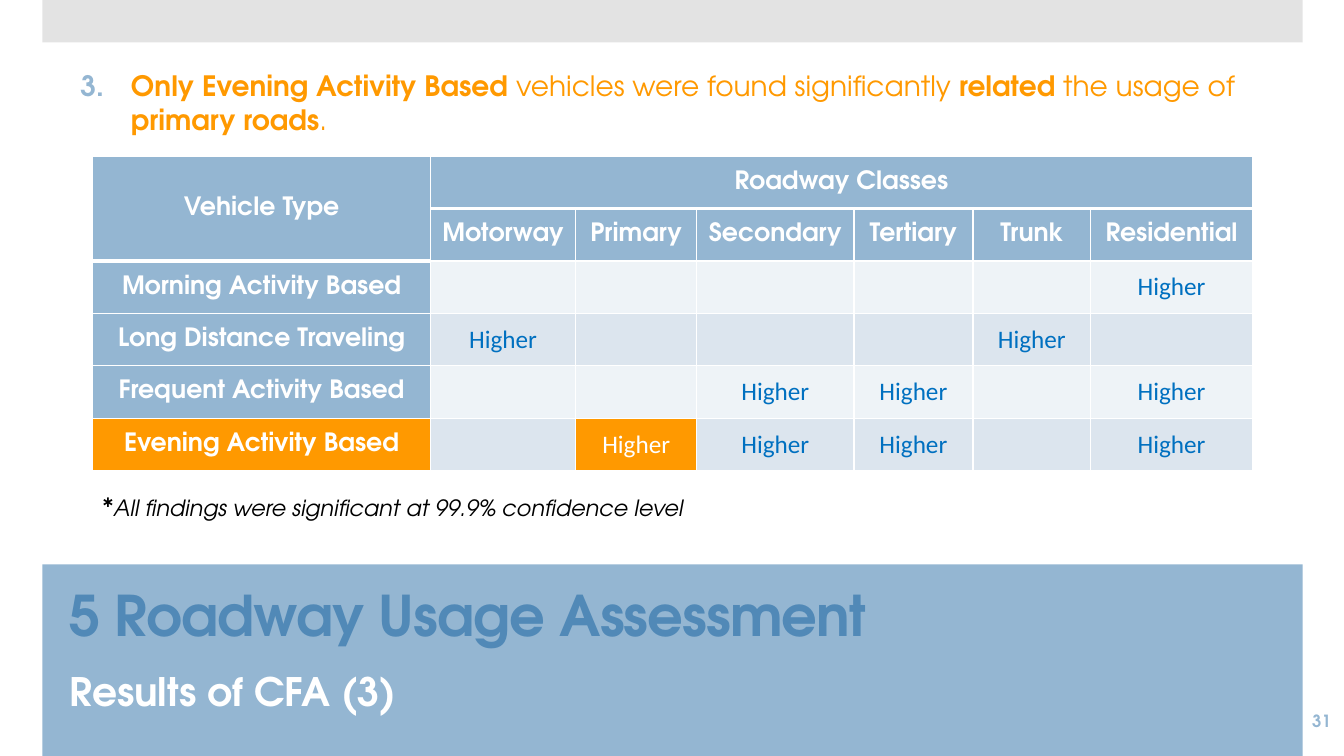
import pptx
import pptx.util
import pptx.dml.color
import pptx.enum.shapes
import pptx.enum.text
import pptx.oxml.ns
from lxml import etree

Inches, Pt = pptx.util.Inches, pptx.util.Pt
ALIGN, ANCHOR = pptx.enum.text.PP_ALIGN, pptx.enum.text.MSO_ANCHOR
qn = pptx.oxml.ns.qn

COLORS = {
    "blue": "94B6D2", "title": "5189B7", "grey": "C8C8C8", "orange": "FF9900",
    "white": "FFFFFF", "black": "000000", "value": "0070C0",
    "band_light": "EEF3F7", "band_dark": "DCE5EE",
}
HEAD_FONT, VALUE_FONT = "TeX Gyre Adventor", "Calibri"

ROADS = ["Motorway", "Primary", "Secondary", "Tertiary", "Trunk", "Residential"]
HIGHER = {
    "Morning Activity Based": ["Residential"],
    "Long Distance Traveling": ["Motorway", "Trunk"],
    "Frequent Activity Based": ["Secondary", "Tertiary", "Residential"],
    "Evening Activity Based": ["Primary", "Secondary", "Tertiary", "Residential"],
}
HIGHLIGHTS = [(5, 0), (5, 2)]
COL_WIDTHS = [3.35, 1.44, 1.2, 1.56, 1.18, 1.17, 1.6]
ROW_HEIGHT = 0.52


def rgb(name):
    return pptx.dml.color.RGBColor.from_string(COLORS[name])


def format_run(r, size, color, bold=False, italic=False, font=HEAD_FONT):
    r.font.size, r.font.name = Pt(size), font
    r.font.bold, r.font.italic = bold, italic
    r.font.color.rgb = rgb(color)


def add_run(p, text, *style, **options):
    r = p.add_run()
    r.text = text
    format_run(r, *style, **options)


def add_text_box(slide, box, wrap=True, anchor=ANCHOR.TOP):
    tf = slide.shapes.add_textbox(*map(Inches, box)).text_frame
    tf.word_wrap, tf.vertical_anchor = wrap, anchor
    return tf.paragraphs[0]


def add_band(slide, box, color, opacity=100):
    sp = slide.shapes.add_shape(pptx.enum.shapes.MSO_SHAPE.RECTANGLE, *map(Inches, box))
    sp.shadow.inherit = False
    sp.fill.solid()
    sp.fill.fore_color.rgb = rgb(color)
    sp.line.fill.background()
    if opacity < 100:
        clr = sp.fill._xPr.find(".//" + qn("a:srgbClr"))
        etree.SubElement(clr, qn("a:alpha"), val=str(opacity * 1000))


def add_finding(slide, box):
    p = add_text_box(slide, box)
    phrases = ["Only Evening Activity Based ", "vehicles were found significantly ",
               "related", " the usage of ", "primary roads", "."]
    for i, phrase in enumerate(phrases):
        add_run(p, phrase, 20, "orange", bold=i % 2 == 0)

    # Hanging number
    pPr = p._p.get_or_add_pPr()
    pPr.set("marL", str(Inches(0.5)))
    pPr.set("indent", str(Inches(-0.5)))
    bu_color = etree.SubElement(pPr, qn("a:buClr"))
    etree.SubElement(bu_color, qn("a:srgbClr"), val=COLORS["blue"])
    etree.SubElement(pPr, qn("a:buFont"), typeface=HEAD_FONT)
    etree.SubElement(pPr, qn("a:buAutoNum"), type="arabicPeriod", startAt="3")


def set_borders(cell, widths):
    tcPr = cell._tc.get_or_add_tcPr()
    for i, (side, width) in enumerate(widths.items()):
        ln = etree.Element(qn("a:ln" + side), w=str(Pt(width)))
        fill = etree.SubElement(ln, qn("a:solidFill"))
        etree.SubElement(fill, qn("a:srgbClr"), val=COLORS["white"])
        tcPr.insert(i, ln)


def rule_width(boundary, col):
    """Thick rule below the top header; the first column's header spans two rows."""
    return 3 if boundary == (2 if col == 0 else 1) else 1


def format_cell(cell, row, col, text):
    is_header = row < 2 or col == 0
    highlighted = (row, col) in HIGHLIGHTS
    fill = "blue" if is_header else ("band_dark" if row % 2 else "band_light")
    cell.fill.solid()
    cell.fill.fore_color.rgb = rgb("orange" if highlighted else fill)
    cell.vertical_anchor = ANCHOR.MIDDLE
    cell.margin_left = cell.margin_right = Inches(0.07)
    cell.margin_top = cell.margin_bottom = 0
    bottom = 2 if (row, col) == (0, 0) else row + 1
    set_borders(cell, {"L": 1, "R": 1, "T": rule_width(row, col),
                       "B": rule_width(bottom, col)})
    if text:
        p = cell.text_frame.paragraphs[0]
        p.alignment = ALIGN.CENTER
        color = "white" if is_header or highlighted else "value"
        add_run(p, text, 18, color, bold=is_header,
                font=HEAD_FONT if is_header else VALUE_FONT)


def add_usage_table(slide, left, top):
    rows = [["Vehicle Type", "Roadway Classes"] + [""] * 5, [""] + ROADS]
    rows += [[vehicle] + ["Higher" if road in roads else "" for road in ROADS]
             for vehicle, roads in HIGHER.items()]
    box = (left, top, sum(COL_WIDTHS), ROW_HEIGHT * len(rows))
    table = slide.shapes.add_table(len(rows), len(COL_WIDTHS), *map(Inches, box)).table
    for column, width in zip(table.columns, COL_WIDTHS):
        column.width = Inches(width)
    for row, texts in enumerate(rows):
        table.rows[row].height = Inches(ROW_HEIGHT)
        for col, text in enumerate(texts):
            format_cell(table.cell(row, col), row, col, text)
    table.cell(0, 0).merge(table.cell(1, 0))
    table.cell(0, 1).merge(table.cell(0, 6))


def add_note(slide, box):
    p = add_text_box(slide, box, wrap=False)
    add_run(p, "*", 18, "black", italic=True)
    add_run(p, "All findings were significant at 99.9% confidence level",
            16, "black", italic=True)


def add_title_band(slide, left, top, width, height):
    add_band(slide, (left, top, width, height), "blue")

    # Title, brought in front of the band
    title = slide.shapes.title
    slide.shapes._spTree.append(title._element)
    title.left, title.top = Inches(left + 0.17), Inches(top + 0.02)
    title.width, title.height = Inches(width - 0.57), Inches(1.03)
    tf = title.text_frame
    tf.text = "5 Roadway Usage Assessment"
    tf.auto_size = pptx.enum.text.MSO_AUTO_SIZE.NONE
    tf.word_wrap, tf.vertical_anchor = True, ANCHOR.MIDDLE
    p = tf.paragraphs[0]
    p.alignment, p.line_spacing, p.space_after = ALIGN.LEFT, 0.9, Pt(6)
    format_run(p.runs[0], 40, "title", bold=True)
    p.runs[0].font._element.set("spc", "-60")

    # Subtitle
    p = add_text_box(slide, (left + 0.17, top + 0.97, 3.47, 0.57), wrap=False)
    add_run(p, "Results of CFA (3)", 28, "white", bold=True)


def add_page_number(slide, box):
    p = add_text_box(slide, box, anchor=ANCHOR.MIDDLE)
    p.alignment = ALIGN.RIGHT
    add_run(p, "31", 12, "blue", bold=True)


def main():
    prs = pptx.Presentation()
    prs.slide_width, prs.slide_height = Inches(13.33), Inches(7.5)
    slide = prs.slides.add_slide(prs.slide_layouts[5])
    add_band(slide, (0.42, 0, 12.5, 0.42), "grey", opacity=50)
    add_finding(slide, (0.7, 0.63, 11.93, 0.8))
    add_usage_table(slide, 0.92, 1.55)
    add_note(slide, (0.92, 4.83, 6.08, 0.4))
    add_title_band(slide, 0.42, 5.6, 12.5, 1.9)
    add_page_number(slide, (11.63, 6.95, 1.67, 0.4))
    prs.save("out.pptx")


if __name__ == "__main__":
    main()
